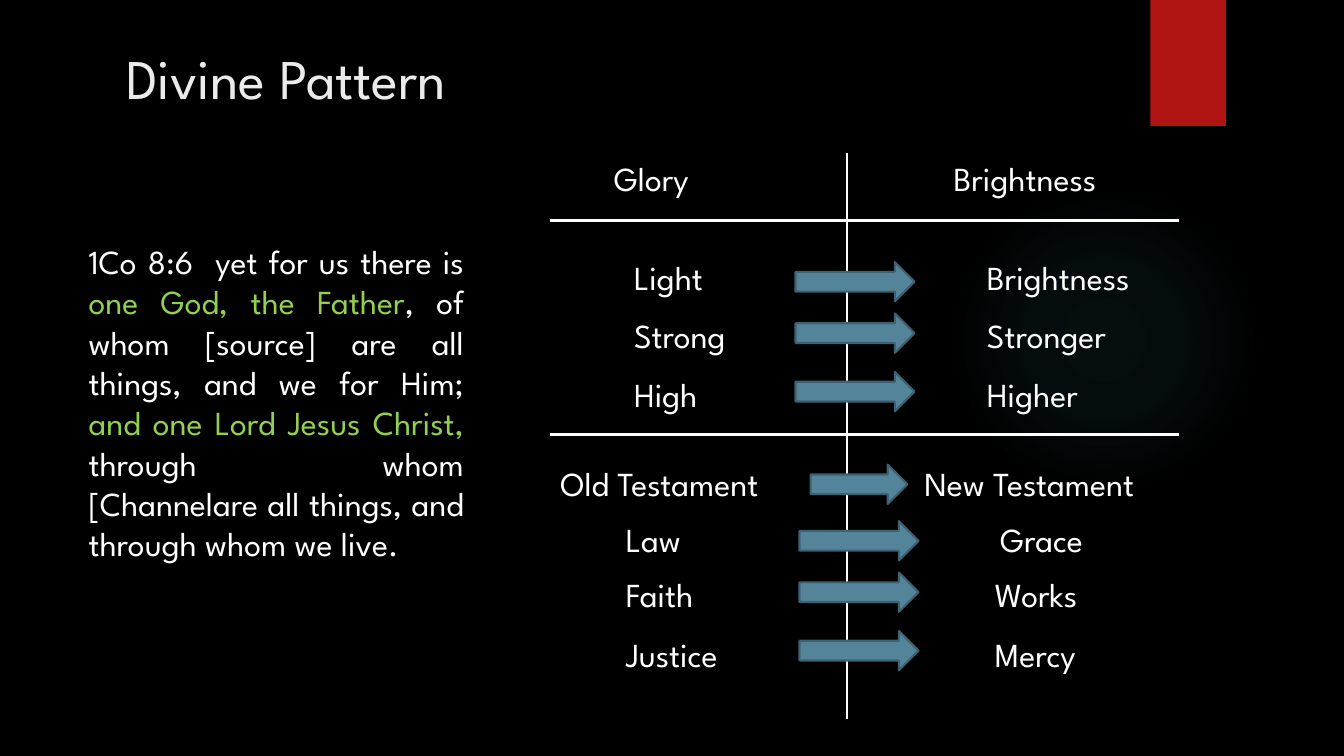
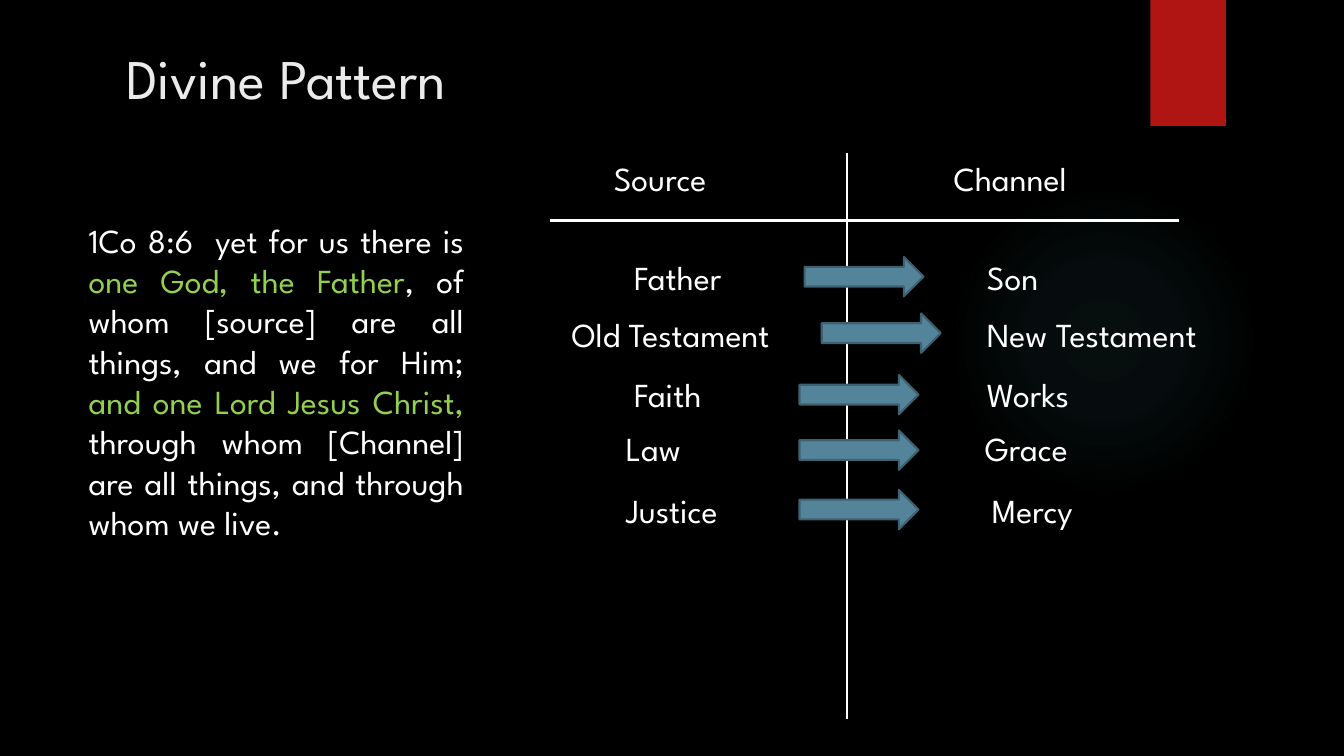
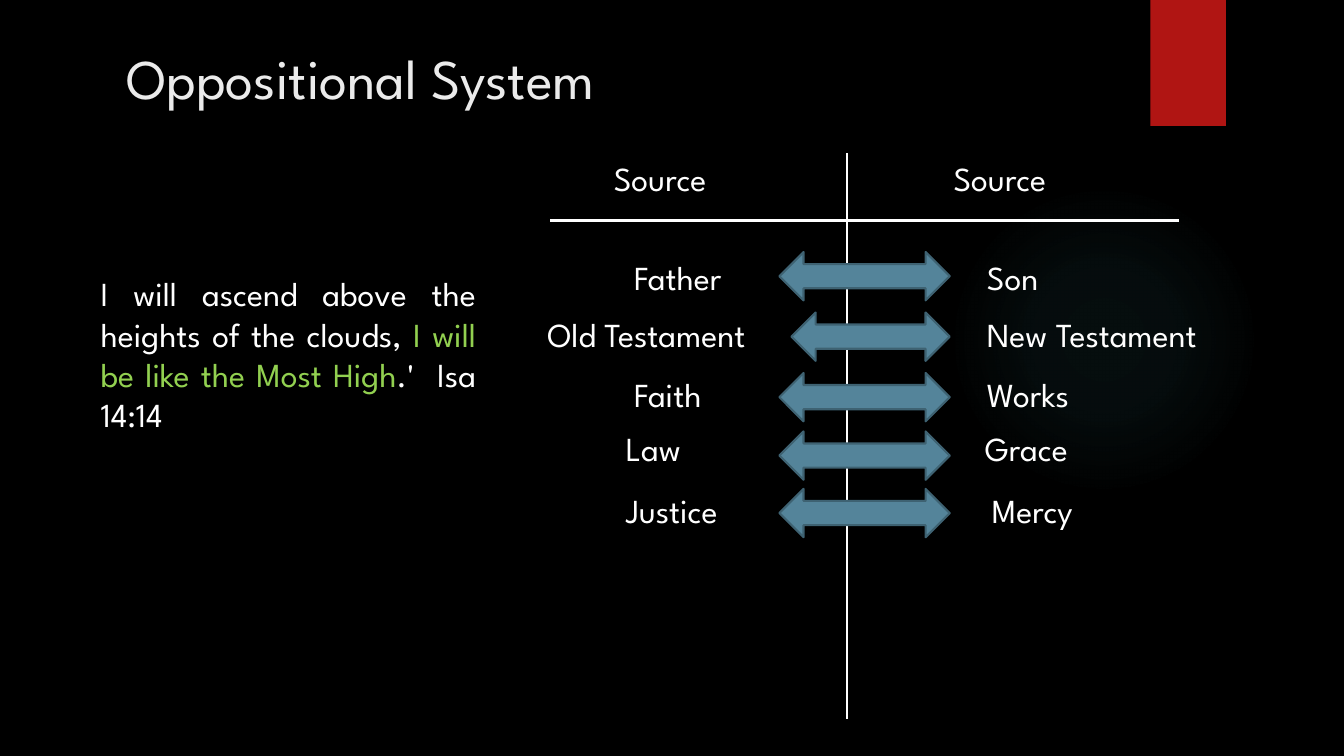
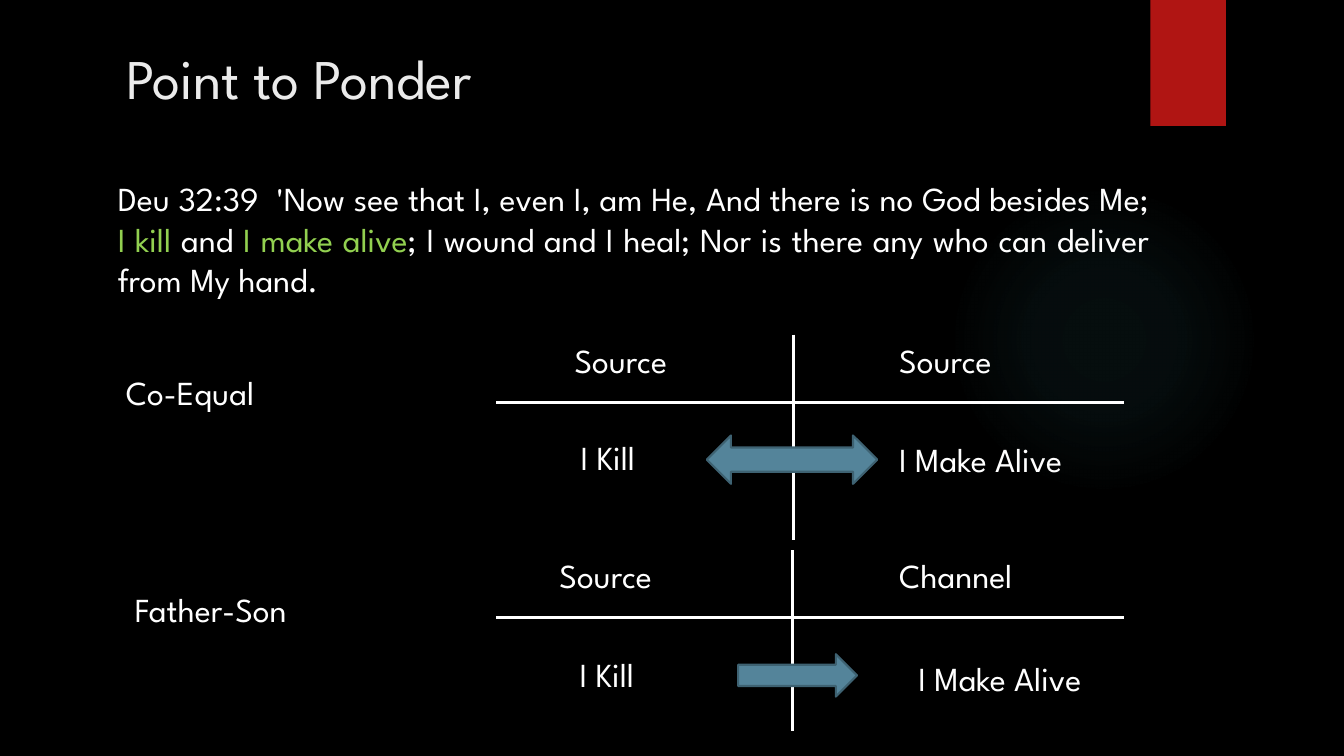
import dataclasses

import lxml.etree
import pptx
import pptx.dml.color
import pptx.enum.shapes
import pptx.enum.text
import pptx.oxml
import pptx.oxml.ns
import pptx.util

Inches = pptx.util.Inches
Pt = pptx.util.Pt
qn = pptx.oxml.ns.qn
Shape = pptx.enum.shapes.MSO_SHAPE
Align = pptx.enum.text.PP_ALIGN


@dataclasses.dataclass(frozen=True)
class Theme:
    font: str = "League Spartan"
    background: str = "000000"
    title: str = "EBEBEB"
    text: str = "FFFFFF"
    highlight: str = "92D050"
    band: str = "B01513"
    glow: str = "50B9C1"
    arrow: str = "54849A"
    arrow_edge: str = "3E6272"
    title_size: int = 40
    text_size: int = 24
    rule_width: float = 2
    edge_width: float = 1.5


# Label widths that fit each word at the text size
LABEL_WIDTHS = {
    "Glory": 1.16, "Brightness": 1.8, "Light": 0.97, "Strong": 1.24,
    "Stronger": 1.56, "High": 0.93, "Higher": 1.25, "Old Testament": 2.58,
    "New Testament": 2.74, "Law": 0.87, "Grace": 1.26, "Faith": 0.98,
    "Works": 1.15, "Justice": 1.32, "Mercy": 1.23, "Source": 1.43,
    "Channel": 1.61, "Father": 1.23, "Son": 0.8, "I Kill": 0.77,
    "I Make Alive": 2.18, "Co-Equal": 1.72, "Father-Son": 2.03,
}
LABEL_HEIGHT = 0.5
RULE_LENGTH = 6.23


def color(value):
    return pptx.dml.color.RGBColor.from_string(value)


class Deck:
    def __init__(self, theme):
        self.theme = theme
        self.presentation = pptx.Presentation()
        self.presentation.slide_width = Inches(13.33)
        self.presentation.slide_height = Inches(7.5)
        fill = self.presentation.slide_master.background.fill
        fill.solid()
        fill.fore_color.rgb = color(theme.background)
        self.slide = None

    def add_slide(self, title):
        layout = self.presentation.slide_layouts.get_by_name("Title Only")
        self.slide = self.presentation.slides.add_slide(layout)
        self.glow()
        self.shape(Shape.RECTANGLE, 11.41, 0, 0.75, 1.25, self.theme.band)
        self.title(title)

    def title(self, text):
        shape = self.slide.shapes.title
        shape.left, shape.top = Inches(1.15), Inches(0.38)
        shape.width, shape.height = Inches(10.98), Inches(1.15)
        frame = shape.text_frame
        frame.vertical_anchor = pptx.enum.text.MSO_ANCHOR.TOP
        frame.auto_size = pptx.enum.text.MSO_AUTO_SIZE.NONE
        paragraph = frame.paragraphs[0]
        paragraph.alignment = Align.LEFT
        self.run(paragraph, text, self.theme.title, self.theme.title_size)

    def run(self, paragraph, text, text_color, size):
        run = paragraph.add_run()
        run.text = text
        run.font.name = self.theme.font
        run.font.size = Pt(size)
        run.font.color.rgb = color(text_color)

    def text_box(self, left, top, width, height, runs, wrap, alignment):
        shape = self.slide.shapes.add_textbox(
            Inches(left), Inches(top), Inches(width), Inches(height))
        frame = shape.text_frame
        frame.word_wrap = wrap
        frame.auto_size = pptx.enum.text.MSO_AUTO_SIZE.SHAPE_TO_FIT_TEXT
        paragraph = frame.paragraphs[0]
        paragraph.alignment = alignment
        for text, text_color in runs:
            self.run(paragraph, text, text_color, self.theme.text_size)

    def label(self, text, left, top):
        self.text_box(left, top, LABEL_WIDTHS[text], LABEL_HEIGHT,
                      [(text, self.theme.text)], False, Align.LEFT)

    def verse(self, left, top, width, height, parts):
        """Justified verse: plain and highlighted parts alternate."""
        colors = (self.theme.text, self.theme.highlight)
        runs = [(part, colors[i % 2]) for i, part in enumerate(parts)]
        self.text_box(left, top, width, height, runs, True, Align.JUSTIFY)

    def shape(self, kind, left, top, width, height, fill=None, edge=None):
        shape = self.slide.shapes.add_shape(
            kind, Inches(left), Inches(top), Inches(width), Inches(height))
        shape.shadow.inherit = False
        if fill:
            shape.fill.solid()
            shape.fill.fore_color.rgb = color(fill)
        else:
            shape.fill.background()
        if edge:
            shape.line.color.rgb = color(edge)
            shape.line.width = Pt(self.theme.edge_width)
        else:
            shape.line.fill.background()
        return shape

    def glow(self):
        shape = self.shape(Shape.OVAL, 9.41, 1.83, 3.08, 3.08)
        gradient = lxml.etree.Element(qn("a:gradFill"), rotWithShape="1")
        stops = lxml.etree.SubElement(gradient, qn("a:gsLst"))
        for position, alpha in ((0, 7), (36, 6), (69, 0)):
            stop = lxml.etree.SubElement(
                stops, qn("a:gs"), pos=str(position * 1000))
            tint = lxml.etree.SubElement(
                stop, qn("a:srgbClr"), val=self.theme.glow)
            lxml.etree.SubElement(tint, qn("a:alpha"), val=str(alpha * 1000))
        radial = lxml.etree.SubElement(gradient, qn("a:path"), path="circle")
        lxml.etree.SubElement(radial, qn("a:fillToRect"),
                              l="50000", t="50000", r="50000", b="50000")
        properties = shape.element.spPr
        properties.replace(properties.find(qn("a:noFill")), gradient)

    def arrow(self, left, top, width=1.18, height=0.39):
        self.shape(Shape.RIGHT_ARROW, left, top, width, height,
                   self.theme.arrow, self.theme.arrow_edge)

    def double_arrow(self, left, top, width=1.69, height=0.48):
        self.shape(Shape.LEFT_RIGHT_ARROW, left, top, width, height,
                   self.theme.arrow, self.theme.arrow_edge)

    def rule(self, x1, y1, x2, y2):
        line = self.slide.shapes.add_connector(
            pptx.enum.shapes.MSO_CONNECTOR.STRAIGHT,
            Inches(x1), Inches(y1), Inches(x2), Inches(y2))
        line.line.color.rgb = color(self.theme.text)
        line.line.width = Pt(self.theme.rule_width)
        lxml.etree.SubElement(line.element.spPr, qn("a:effectLst"))

    def row_rule(self, left, top):
        self.rule(left, top, left + RULE_LENGTH, top)

    def chart_frame(self, heads, head_lefts, left, top, middle, bottom):
        """Two column heads over a T-shaped pair of rules."""
        for text, head_left in zip(heads, head_lefts):
            self.label(text, head_left, top)
        self.row_rule(left, top + 0.67)
        self.rule(middle, top, middle, bottom)

    def main_frame(self, *heads):
        self.chart_frame(heads, (5.99, 9.36), 5.46, 1.52, 8.4, 7.13)

    def rows(self, rows):
        for left_text, left, right_text, right, top in rows:
            self.label(left_text, left, top)
            self.label(right_text, right, top)


# Wording shared by slides
def corinthians(ending):
    return ["1Co 8:6  yet for us there is ", "one God, the Father",
            ", of whom [source] are all things, and we for Him; ",
            "and one Lord Jesus Christ, ", ending]


def father_son_rows(testament_left):
    return [("Father", 6.19, "Son", 9.69, 2.5),
            ("Old Testament", testament_left, "New Testament", 9.69, 3.07),
            ("Faith", 6.19, "Works", 9.69, 3.66),
            ("Law", 6.11, "Grace", 9.67, 4.2),
            ("Justice", 6.11, "Mercy", 9.74, 4.81)]


def glory_slide(deck):
    deck.add_slide("Divine Pattern")
    deck.main_frame("Glory", "Brightness")
    deck.row_rule(5.46, 4.31)
    deck.rows([("Light", 6.19, "Brightness", 9.69, 2.5),
               ("Strong", 6.19, "Stronger", 9.69, 3.08),
               ("High", 6.19, "Higher", 9.69, 3.66),
               ("Old Testament", 5.46, "New Testament", 9.07, 4.54),
               ("Law", 6.11, "Grace", 9.82, 5.1),
               ("Faith", 6.11, "Works", 9.77, 5.64),
               ("Justice", 6.11, "Mercy", 9.77, 6.24)])
    deck.verse(0.78, 2.34, 3.92, 4.14, corinthians(
        "through whom [Channelare all things, and through whom we live."))
    # The lower group repeats the upper arrows further down
    for top in (2.6, 3.11, 3.69):
        deck.arrow(7.89, top)
        deck.arrow(7.93, top + 2.57)
    deck.arrow(8.04, 4.61, 0.96)


def channel_slide(deck):
    deck.add_slide("Divine Pattern")
    deck.main_frame("Source", "Channel")
    deck.rows(father_son_rows(5.57))
    deck.verse(0.78, 2.13, 3.92, 4.14, corinthians(
        "through whom [Channel] are all things, and through whom we live."))
    for left, top in ((7.98, 2.55), (8.15, 3.11), (7.93, 3.72),
                      (7.93, 4.27), (7.93, 4.86)):
        deck.arrow(left, top)


def opposition_slide(deck):
    deck.add_slide("Oppositional System")
    deck.main_frame("Source", "Source")
    deck.rows(father_son_rows(5.33))
    deck.verse(0.9, 2.66, 3.92, 1.72, [
        "I will ascend above the heights of the clouds, ",
        "I will be like the Most High", ".'  Isa 14:14"])
    for top in (2.5, 3.7, 4.28, 4.85):
        deck.double_arrow(7.73, top)
    deck.double_arrow(7.85, 3.1, 1.57)


def ponder_slide(deck):
    deck.add_slide("Point to Ponder")
    deck.verse(1.07, 1.72, 10.43, 1.31, [
        "Deu 32:39  'Now see that I, even I, am He, "
        "And there is no God besides Me; ",
        "I kill ", "and ", "I make alive",
        "; I wound and I heal; Nor is there any who can deliver "
        "from My hand."])
    # Co-equal view
    deck.label("Co-Equal", 1.15, 3.64)
    deck.chart_frame(("Source", "Source"), (5.6, 8.82),
                     4.92, 3.32, 7.87, 5.36)
    deck.label("I Kill", 5.66, 4.29)
    deck.label("I Make Alive", 8.82, 4.31)
    deck.double_arrow(7.01, 4.32)
    # Father-Son view
    deck.label("Father-Son", 1.24, 5.79)
    deck.chart_frame(("Source", "Channel"), (5.45, 8.82),
                     4.92, 5.46, 7.86, 7.25)
    deck.label("I Kill", 5.65, 6.44)
    deck.label("I Make Alive", 9.01, 6.48)
    deck.arrow(7.32, 6.49, height=0.42)


def main():
    deck = Deck(Theme())
    for build in (glory_slide, channel_slide, opposition_slide, ponder_slide):
        build(deck)
    deck.presentation.save("out.pptx")


if __name__ == "__main__":
    main()
